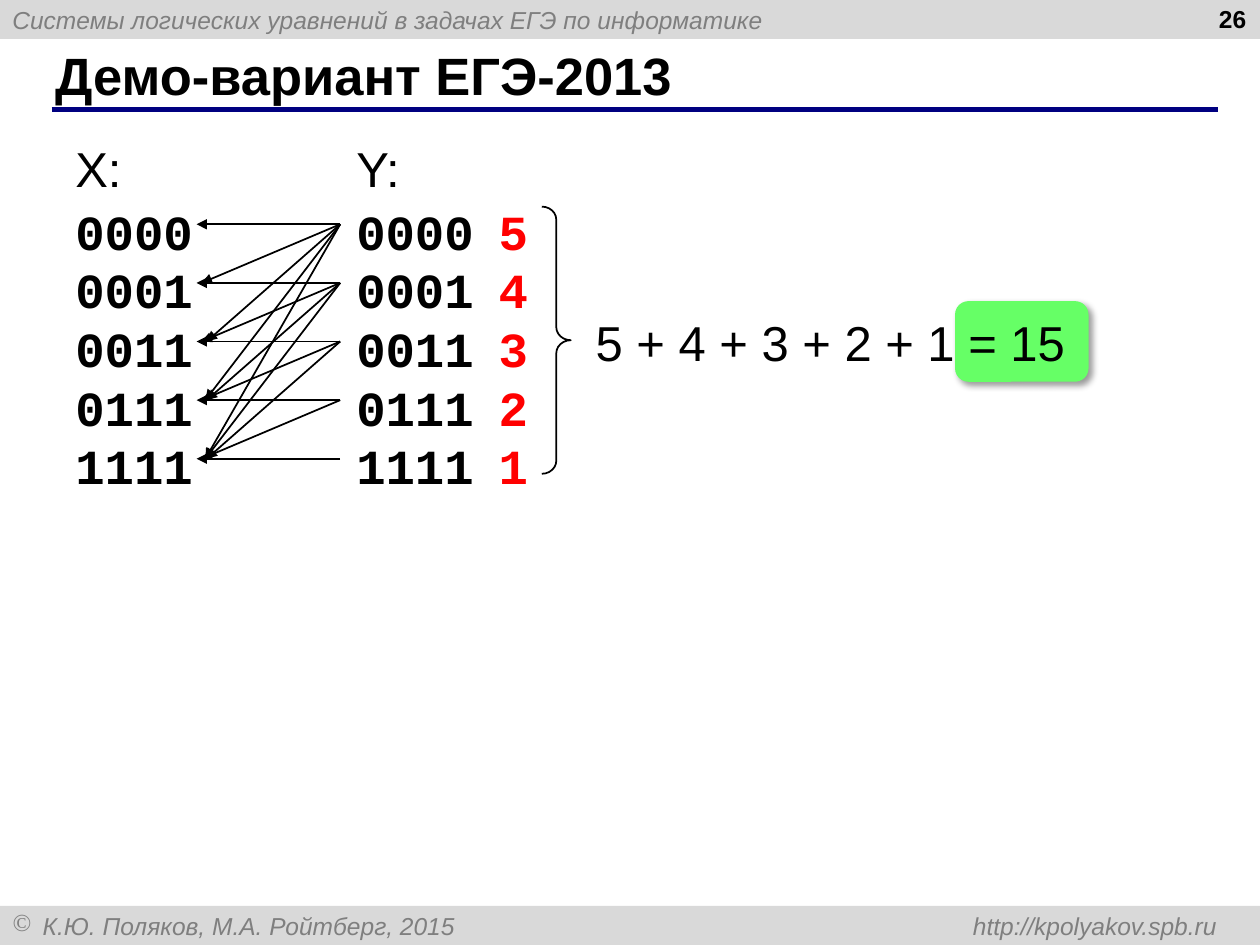
from lxml import etree
from pptx import Presentation
from pptx.dml.color import RGBColor
from pptx.enum.shapes import MSO_CONNECTOR, MSO_SHAPE
from pptx.enum.text import MSO_ANCHOR, PP_ALIGN
from pptx.oxml import parse_xml
from pptx.oxml.ns import nsdecls, qn
from pptx.util import Inches, Pt

LINE = MSO_CONNECTOR.STRAIGHT
RECT, ROUND, BRACE = MSO_SHAPE.RECTANGLE, MSO_SHAPE.ROUNDED_RECTANGLE, MSO_SHAPE.LEFT_BRACE
MIDDLE, TOP = MSO_ANCHOR.MIDDLE, MSO_ANCHOR.TOP
LEFT, RIGHT = PP_ALIGN.LEFT, PP_ALIGN.RIGHT

BLACK = RGBColor(0x00, 0x00, 0x00)
RED = RGBColor(0xFF, 0x00, 0x00)
NAVY = RGBColor(0x00, 0x00, 0x80)
GREEN = RGBColor(0x66, 0xFF, 0x66)
PALE = RGBColor(0xD9, 0xD9, 0xD9)
GREY = RGBColor(0x7F, 0x7F, 0x7F)
SANS, MONO = "Arial", "Courier New"

HEADER = "Системы логических уравнений в задачах ЕГЭ по информатике"
FOOTER = "К.Ю. Поляков, М.А. Ройтберг, 2015 \thttp://kpolyakov.spb.ru"
TITLE = "Демо-вариант ЕГЭ-2013"
NUMBER = "26"
CODES = ["0000", "0001", "0011", "0111", "1111"]
COUNTS = ["5", "4", "3", "2", "1"]
COLUMNS = [("X:", 0.5), ("Y:", 2.73)]
TOTAL = "5 + 4 + 3 + 2 + 1 = 15"

WIDE, HIGH, BAR = 10, 7.5, 0.31
LEAD, GAP = 33.5, 2.5
BODY = 1.05
ROW = LEAD / 72
FIRST = 1.78
START = 2.7
TIPS = [1.56, 1.6, 1.64, 1.63, 1.63]

deck = Presentation()
deck.slide_width, deck.slide_height = Inches(WIDE), Inches(HIGH)
slide = deck.slides.add_slide(deck.slide_layouts[6])
shapes = slide.shapes


def style(par, size, color, face=SANS, bold=False, italic=False):
    font = par.font
    font.size, font.name, font.bold, font.italic = Pt(size), face, bold, italic
    font.color.rgb = color


def add_box(x, y, w, h, lines, anchor=TOP, wrap=True):
    frame = shapes.add_textbox(*map(Inches, (x, y, w, h))).text_frame
    frame.word_wrap, frame.vertical_anchor = wrap, anchor
    frame.text = "\n".join(lines)
    return frame.paragraphs


def add_shape(kind, x, y, w, h, fill=None):
    shape = shapes.add_shape(kind, *map(Inches, (x, y, w, h)))
    shape.shadow.inherit = False
    if fill is None:
        shape.fill.background()
    else:
        shape.fill.solid()
        shape.fill.fore_color.rgb = fill
        shape.line.fill.background()
    return shape


def add_bar(y, text):
    frame = add_shape(RECT, 0, y, WIDE, BAR, PALE).text_frame
    frame.vertical_anchor, frame.word_wrap = MIDDLE, True
    frame.text = text
    par = frame.paragraphs[0]
    par.alignment = LEFT
    style(par, 14, GREY, italic=True)
    return par


def add_line(x1, y1, x2, y2, color, width, arrow=False):
    link = shapes.add_connector(LINE, *map(Inches, (x1, y1, x2, y2)))
    link.line.color.rgb, link.line.width = color, Pt(width)
    if arrow:
        etree.SubElement(link.line._get_or_add_ln(), qn("a:tailEnd"), type="triangle")
    etree.SubElement(link._element.spPr, qn("a:effectLst"))


def add_list(x, y, w, lines, color, face):
    pars = add_box(x, y, w, len(lines) * ROW + 0.1, lines, wrap=False)
    for par in pars:
        par.line_spacing = Pt(LEAD)
        style(par, 28, color, face, bold=face == MONO)
    return pars


add_bar(0, HEADER)
foot = add_bar(HIGH - BAR, FOOTER)._p.get_or_add_pPr()
foot.set("marL", str(Inches(0.24)))
foot.set("indent", str(-Inches(0.24)))
etree.SubElement(foot, qn("a:buChar"), char="©")
tabs = etree.SubElement(foot, qn("a:tabLst"))
etree.SubElement(tabs, qn("a:tab"), pos=str(Inches(9.56)), algn="r")

add_line(0.41, 0.87, 9.67, 0.87, NAVY, 3)
style(add_box(0.34, 0.33, 9.16, 0.52, [TITLE], MIDDLE)[0], 30, BLACK, bold=True)
page = add_box(7.66, -0.02, 2.33, 0.52, [NUMBER])[0]
page.alignment = RIGHT
style(page, 14, BLACK, bold=True)

for name, x in COLUMNS:
    head = add_list(x, BODY, 1.14, [name] + CODES, BLACK, MONO)[0]
    head.space_after = Pt(GAP)
    style(head, 28, BLACK)
add_list(3.86, BODY + (LEAD + GAP) / 72, 0.44, COUNTS, RED, MONO)

badge = add_shape(ROUND, 7.58, 2.39, 1.06, 0.64, GREEN)
old = badge._element.spPr.find(qn("a:effectLst"))
old.append(parse_xml(
    f'<a:outerShdw {nsdecls("a")} blurRad="{Pt(4)}" dist="{Pt(3)}" dir="2700000" '
    'algn="tl" rotWithShape="0"><a:srgbClr val="000000"><a:alpha val="40000"/>'
    '</a:srgbClr></a:outerShdw>'))
brace = add_shape(BRACE, 4.3, 1.64, 0.23, 2.12)
brace.rotation = 180
brace.adjustments[0] = 0.45
brace.line.color.rgb, brace.line.width = BLACK, Pt(1)
add_list(4.63, 2.43, 3.97, [TOTAL], BLACK, SANS)

for src in range(len(CODES)):
    for step, tip in enumerate(TIPS[:len(CODES) - src]):
        add_line(START, FIRST + src * ROW, tip, FIRST + (src + step) * ROW, BLACK, 1, True)

deck.save("out.pptx")
